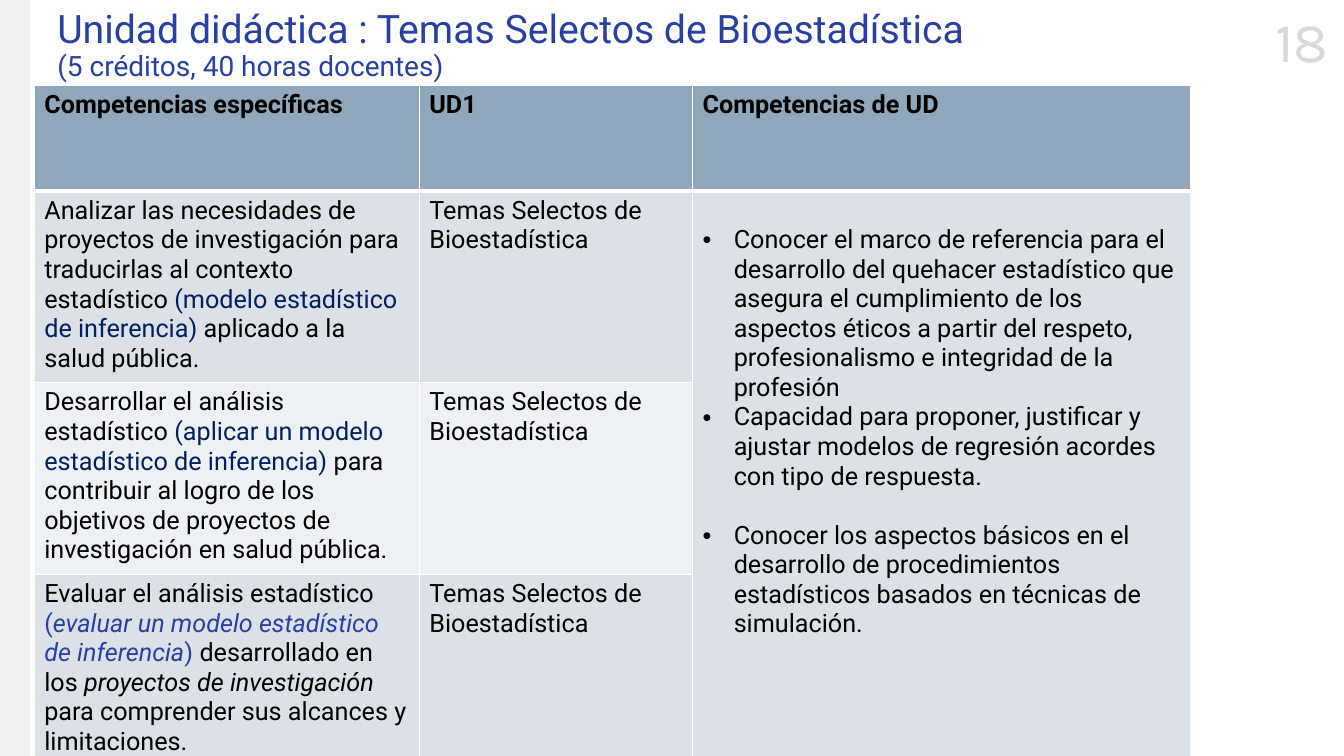
import lxml.etree
import pptx
import pptx.dml.color
import pptx.enum.shapes
import pptx.enum.text
import pptx.oxml.ns
import pptx.util

RGBColor = pptx.dml.color.RGBColor
WHITE = RGBColor(0xFF, 0xFF, 0xFF)
BLACK = RGBColor(0x00, 0x00, 0x00)
BLUE = RGBColor(0x28, 0x40, 0xA1)
NAVY = RGBColor(0x00, 0x20, 0x60)
HEADER = RGBColor(0x91, 0xA7, 0xBC)
BAND_DARK = RGBColor(0xDC, 0xE1, 0xE7)
BAND_LIGHT = RGBColor(0xEE, 0xF1, 0xF3)
SIDEBAR = RGBColor(0xF2, 0xF2, 0xF2)
NUMBER = RGBColor(0xD9, 0xD9, 0xD9)

HEADINGS = ["Competencias específicas", "UD1", "Competencias de UD"]
UNIT = "Temas Selectos de Bioestadística"
SPECIFIC = [
    [("Analizar las necesidades de proyectos de investigación para traducirlas al contexto estadístico ", {}),
     ("(modelo estadístico de inferencia) ", {"color": NAVY}),
     ("aplicado a la salud pública.", {})],
    [("Desarrollar el análisis estadístico ", {}),
     ("(aplicar un modelo estadístico de inferencia) ", {"color": NAVY}),
     ("para contribuir al logro de los objetivos de proyectos de investigación en salud pública.", {})],
    [("Evaluar el análisis estadístico ", {}),
     ("(", {"color": BLUE}),
     ("evaluar un modelo estadístico de inferencia", {"color": BLUE, "italic": True}),
     (") ", {"color": BLUE}),
     ("desarrollado en los ", {}),
     ("proyectos de investigación", {"italic": True}),
     (" para comprender sus alcances y limitaciones.", {})],
]
UNIT_SKILLS = [
    ("Conocer el marco de referencia para el desarrollo del quehacer estadístico que asegura el "
     "cumplimiento de los aspectos éticos a partir del respeto, profesionalismo e integridad de la profesión", 0),
    ("Capacidad para proponer, justificar y ajustar modelos de regresión acordes con tipo de respuesta.", 0),
    ("Conocer los aspectos básicos en el desarrollo de procedimientos estadísticos basados en "
     "técnicas de simulación.", 21),
]


def add_text(p, text, size=18, color=BLACK, font="Roboto", bold=False, italic=False):
    r = p.add_run()
    r.text = text
    r.font.name = font
    r.font.size = pptx.util.Pt(size)
    r.font.bold = bold
    r.font.italic = italic
    r.font.color.rgb = color


class Deck:
    """Slide on a grid of 40 columns by 30 rows, with the style of its elements."""

    def __init__(self):
        self.prs = pptx.Presentation()
        self.prs.slide_width = pptx.util.Inches(13.33)
        self.prs.slide_height = pptx.util.Inches(7.5)
        self.s = self.prs.slides.add_slide(self.prs.slide_layouts[6])

    def x(self, cols):
        return round(self.prs.slide_width * cols / 40)

    def y(self, rows):
        return round(self.prs.slide_height * rows / 30)

    def box(self, left, top, width, height):
        return self.x(left), self.y(top), self.x(width), self.y(height)

    def rect(self, area, fill):
        sp = self.s.shapes.add_shape(pptx.enum.shapes.MSO_SHAPE.RECTANGLE, *self.box(*area))
        sp.shadow.inherit = False
        sp.fill.solid()
        sp.fill.fore_color.rgb = fill
        sp.line.fill.background()

    def text(self, area, wrap=True):
        tf = self.s.shapes.add_textbox(*self.box(*area)).text_frame
        tf.word_wrap = wrap
        return tf.paragraphs[0]

    def table(self, left, top, cols, rows):
        area = self.box(left, top, sum(cols), sum(rows))
        table = self.s.shapes.add_table(len(rows), len(cols), *area).table
        for col, width in zip(table.columns, cols):
            col.width = self.x(width)
        for row, height in zip(table.rows, rows):
            row.height = self.y(height)
        return table

    def cell(self, cell, fill, bottom=1):
        cell.fill.solid()
        cell.fill.fore_color.rgb = fill
        tc_pr = cell._tc.get_or_add_tcPr()
        qn = pptx.oxml.ns.qn
        for i, (side, width) in enumerate([("L", 1), ("R", 1), ("T", 1), ("B", bottom)]):
            ln = lxml.etree.Element(qn(f"a:ln{side}"), w=str(pptx.util.Pt(width)))
            solid = lxml.etree.SubElement(ln, qn("a:solidFill"))
            lxml.etree.SubElement(solid, qn("a:srgbClr"), val=str(WHITE))
            tc_pr.insert(i, ln)

    def bullets(self, tf, items):
        for i, (text, space) in enumerate(items):
            p = tf.add_paragraph() if i else tf.paragraphs[0]
            p_pr = p._p.get_or_add_pPr()
            indent = pptx.util.Inches(0.31)
            p_pr.set("marL", str(indent))
            p_pr.set("indent", str(-indent))
            lxml.etree.SubElement(p_pr, pptx.oxml.ns.qn("a:buFont"), typeface="Arial")
            lxml.etree.SubElement(p_pr, pptx.oxml.ns.qn("a:buChar"), char="•")
            if space:
                p.space_before = pptx.util.Pt(space)
            add_text(p, text)


def main():
    deck = Deck()
    number = deck.text((37.62, 0.08, 2.25, 3.08), wrap=False)
    number.alignment = pptx.enum.text.PP_ALIGN.CENTER
    add_text(number, "18", size=40, color=NUMBER, font="Karla")
    deck.rect((0, 0, 0.9, 30), SIDEBAR)

    title = deck.text((1.41, 0.2, 34.5, 4.56))
    title.line_spacing = 0.9
    add_text(title, "Unidad didáctica : Temas Selectos de Bioestadística", size=28, color=BLUE)
    title.add_line_break()
    add_text(title, "(5 créditos, 40 horas docentes)", size=20, color=BLUE)

    table = deck.table(1.02, 3.38, [11.46, 8.13, 14.82], [4.2] + [7.44] * 3)
    for col, heading in enumerate(HEADINGS):
        cell = table.cell(0, col)
        deck.cell(cell, HEADER, bottom=3)
        add_text(cell.text_frame.paragraphs[0], heading, bold=True)
    for row, runs in enumerate(SPECIFIC, 1):
        band = BAND_DARK if row % 2 else BAND_LIGHT
        for col, fill in enumerate([band, band, BAND_DARK]):
            deck.cell(table.cell(row, col), fill)
        for text, style in runs:
            add_text(table.cell(row, 0).text_frame.paragraphs[0], text, **style)
        add_text(table.cell(row, 1).text_frame.paragraphs[0], UNIT)

    skills = table.cell(1, 2)
    skills.merge(table.cell(3, 2))
    skills.margin_top = pptx.util.Inches(0.34)
    deck.bullets(skills.text_frame, UNIT_SKILLS)
    deck.prs.save("out.pptx")


if __name__ == "__main__":
    main()
